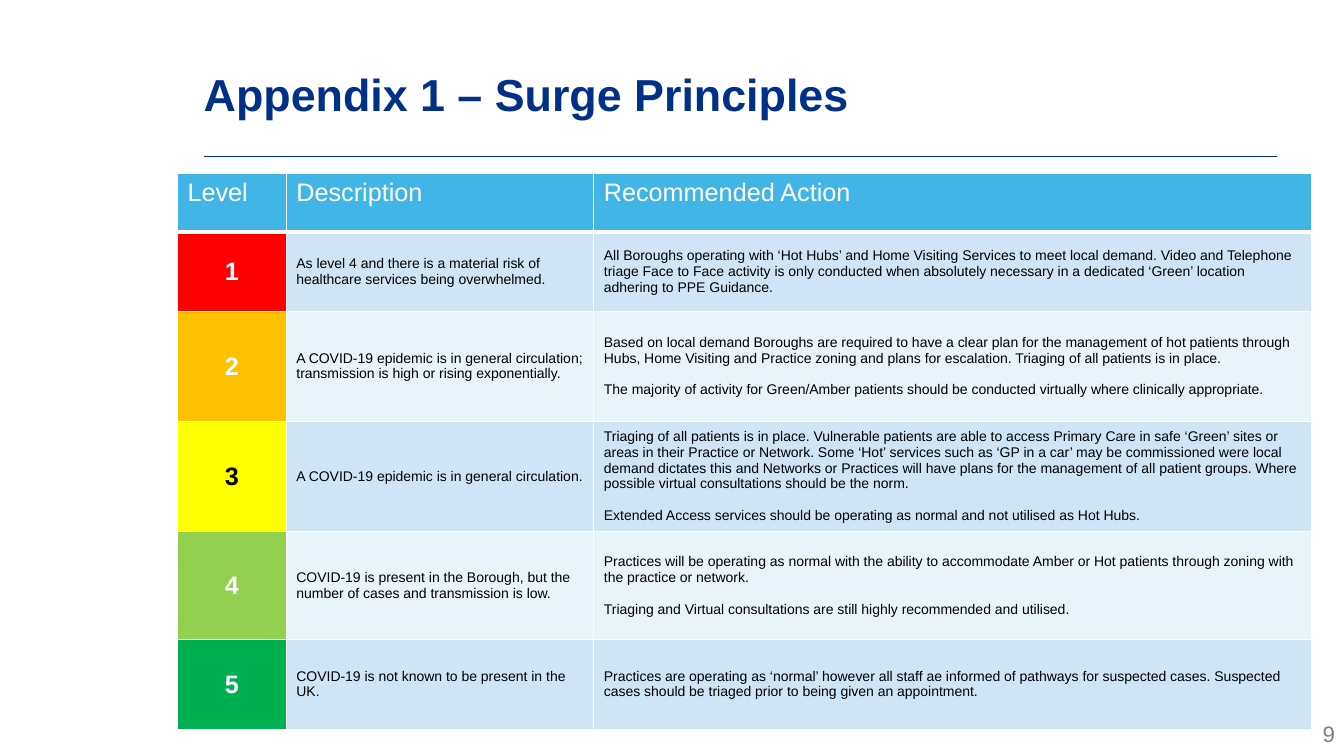
from dataclasses import dataclass

import pptx
import pptx.dml.color
import pptx.enum.shapes
import pptx.enum.text
import pptx.oxml.xmlchemy
import pptx.presentation
import pptx.slide
import pptx.table
import pptx.text.text
import pptx.util
from pptx.oxml.ns import qn
from lxml import etree

Inches = pptx.util.Inches
Pt = pptx.util.Pt
RGBColor = pptx.dml.color.RGBColor
Align = pptx.enum.text.PP_ALIGN
Anchor = pptx.enum.text.MSO_ANCHOR


@dataclass(frozen=True)
class Theme:
    font: str = "Arial"
    navy: str = "003087"
    header: str = "41B6E6"
    bands: tuple[str, str] = ("CFE5F5", "E9F3FA")
    white: str = "FFFFFF"
    black: str = "000000"
    gray: str = "808080"
    title_size: float = 32
    heading_size: float = 18
    number_size: float = 16
    body_size: float = 10
    paragraph_gap: float = 11.5


@dataclass(frozen=True)
class TextStyle:
    size: float
    color: str
    bold: bool = False
    align: Align = Align.LEFT
    anchor: Anchor = Anchor.MIDDLE


@dataclass(frozen=True)
class SurgeLevel:
    color: str
    height: float
    description: str
    actions: tuple[str, ...]
    number_color: str = "FFFFFF"


THEME = Theme()
HEADINGS = ("Level", "Description", "Recommended Action")
COLUMN_WIDTHS = (1.08, 3.05, 7.12)
HEADER_HEIGHT = 0.58
LEVELS = (
    SurgeLevel(
        "FF0000", 0.79,
        "As level 4 and there is a material risk of healthcare services being overwhelmed.",
        ("All Boroughs operating with ‘Hot Hubs’ and Home Visiting Services to meet local demand. "
         "Video and Telephone triage Face to Face activity is only conducted when absolutely "
         "necessary in a dedicated ‘Green’ location adhering to PPE Guidance.",),
    ),
    SurgeLevel(
        "FFC000", 1.09,
        "A COVID-19 epidemic is in general circulation; transmission is high or rising exponentially.",
        ("Based on local demand Boroughs are required to have a clear plan for the management of hot "
         "patients through Hubs, Home Visiting and Practice zoning and plans for escalation. "
         "Triaging of all patients is in place.",
         "The majority of activity for Green/Amber patients should be conducted virtually where "
         "clinically appropriate."),
    ),
    SurgeLevel(
        "FFFF00", 1.09,
        "A COVID-19 epidemic is in general circulation.",
        ("Triaging of all patients is in place. Vulnerable patients are able to access Primary Care "
         "in safe ‘Green’ sites or areas in their Practice or Network. Some ‘Hot’ services such as "
         "‘GP in a car’ may be commissioned were local demand dictates this and Networks or Practices "
         "will have plans for the management of all patient groups. Where possible virtual "
         "consultations should be the norm.",
         "Extended Access services should be operating as normal and not utilised as Hot Hubs."),
        THEME.black,
    ),
    SurgeLevel(
        "92D050", 1.07,
        "COVID-19 is present in the Borough, but the number of cases and transmission is low.",
        ("Practices will be operating as normal with the ability to accommodate Amber or Hot patients "
         "through zoning with the practice or network.",
         "Triaging and Virtual consultations are still highly recommended and utilised."),
    ),
    SurgeLevel(
        "00B050", 0.89,
        "COVID-19 is not known to be present in the UK.",
        ("Practices are operating as ‘normal’ however all staff ae informed of pathways for suspected "
         "cases. Suspected cases should be triaged prior to being given an appointment.",),
    ),
)


def write_paragraphs(
    frame: pptx.text.text.TextFrame, texts: tuple[str, ...], style: TextStyle
) -> None:
    frame.word_wrap = True
    font_format = {"name": THEME.font, "size": Pt(style.size), "bold": style.bold}
    for index, text in enumerate(texts):
        paragraph = frame.add_paragraph() if index else frame.paragraphs[0]
        paragraph.alignment = style.align
        if index:
            paragraph.space_before = Pt(THEME.paragraph_gap)
        run = paragraph.add_run()
        run.text = text
        for name, value in font_format.items():
            setattr(run.font, name, value)
        run.font.color.rgb = RGBColor.from_string(style.color)


def add_cell_borders(cell: pptx.table._Cell, bottom_width: float) -> None:
    properties = cell._tc.get_or_add_tcPr()
    for side in ("lnL", "lnR", "lnT", "lnB"):
        width = bottom_width if side == "lnB" else 1
        line = etree.SubElement(properties, qn(f"a:{side}"), w=str(Pt(width)))
        fill = etree.SubElement(line, qn("a:solidFill"))
        etree.SubElement(fill, qn("a:srgbClr"), val=THEME.white)


def fill_cell(
    cell: pptx.table._Cell, texts: tuple[str, ...], fill: str,
    style: TextStyle, bottom_width: float = 1,
) -> None:
    add_cell_borders(cell, bottom_width)
    cell.fill.solid()
    cell.fill.fore_color.rgb = RGBColor.from_string(fill)
    cell.vertical_anchor = style.anchor
    write_paragraphs(cell.text_frame, texts, style)


def add_title(slide: pptx.slide.Slide) -> None:
    title = slide.shapes.title
    position = {"left": 2.02, "top": 0.3, "width": 10.64, "height": 1.25}
    for name, value in position.items():
        setattr(title, name, Inches(value))
    frame = title.text_frame
    for side in ("left", "top", "right", "bottom"):
        setattr(frame, f"margin_{side}", 0)
    frame.auto_size = pptx.enum.text.MSO_AUTO_SIZE.NONE
    frame.vertical_anchor = Anchor.MIDDLE
    style = TextStyle(THEME.title_size, THEME.navy, bold=True)
    write_paragraphs(frame, ("Appendix 1 – Surge Principles",), style)


def add_title_rule(slide: pptx.slide.Slide) -> None:
    rule = slide.shapes.add_connector(
        pptx.enum.shapes.MSO_CONNECTOR.STRAIGHT,
        Inches(2.02), Inches(1.55), Inches(12.67), Inches(1.55),
    )
    rule.line.color.rgb = RGBColor.from_string(THEME.navy)
    rule.line.width = Pt(0.5)
    etree.SubElement(rule._element.spPr, qn("a:effectLst"))


def add_page_number(slide: pptx.slide.Slide) -> None:
    box = slide.shapes.add_textbox(Inches(12.67), Inches(7.1), Inches(0.67), Inches(0.37))
    style = TextStyle(THEME.number_size, THEME.gray, align=Align.RIGHT)
    write_paragraphs(box.text_frame, ("9",), style)


def add_surge_table(slide: pptx.slide.Slide) -> None:
    heights = (HEADER_HEIGHT, *(level.height for level in LEVELS))
    table = slide.shapes.add_table(
        len(heights), len(COLUMN_WIDTHS), Inches(1.76), Inches(1.72),
        Inches(sum(COLUMN_WIDTHS)), Inches(sum(heights)),
    ).table
    for column, width in zip(table.columns, COLUMN_WIDTHS):
        column.width = Inches(width)
    for row, height in zip(table.rows, heights):
        row.height = Inches(height)

    heading_style = TextStyle(THEME.heading_size, THEME.white, anchor=Anchor.TOP)
    for column, heading in enumerate(HEADINGS):
        fill_cell(table.cell(0, column), (heading,), THEME.header, heading_style, bottom_width=3)

    body_style = TextStyle(THEME.body_size, THEME.black)
    for number, level in enumerate(LEVELS, start=1):
        band = THEME.bands[(number - 1) % 2]
        number_style = TextStyle(THEME.heading_size, level.number_color, True, Align.CENTER)
        fill_cell(table.cell(number, 0), (str(number),), level.color, number_style)
        fill_cell(table.cell(number, 1), (level.description,), band, body_style)
        fill_cell(table.cell(number, 2), level.actions, band, body_style)


def main() -> None:
    presentation = pptx.Presentation()
    presentation.slide_width = Inches(13.33)
    presentation.slide_height = Inches(7.5)
    slide = presentation.slides.add_slide(presentation.slide_layouts.get_by_name("Title Only"))
    add_title_rule(slide)
    add_page_number(slide)
    add_title(slide)
    add_surge_table(slide)
    presentation.save("out.pptx")


if __name__ == "__main__":
    main()
